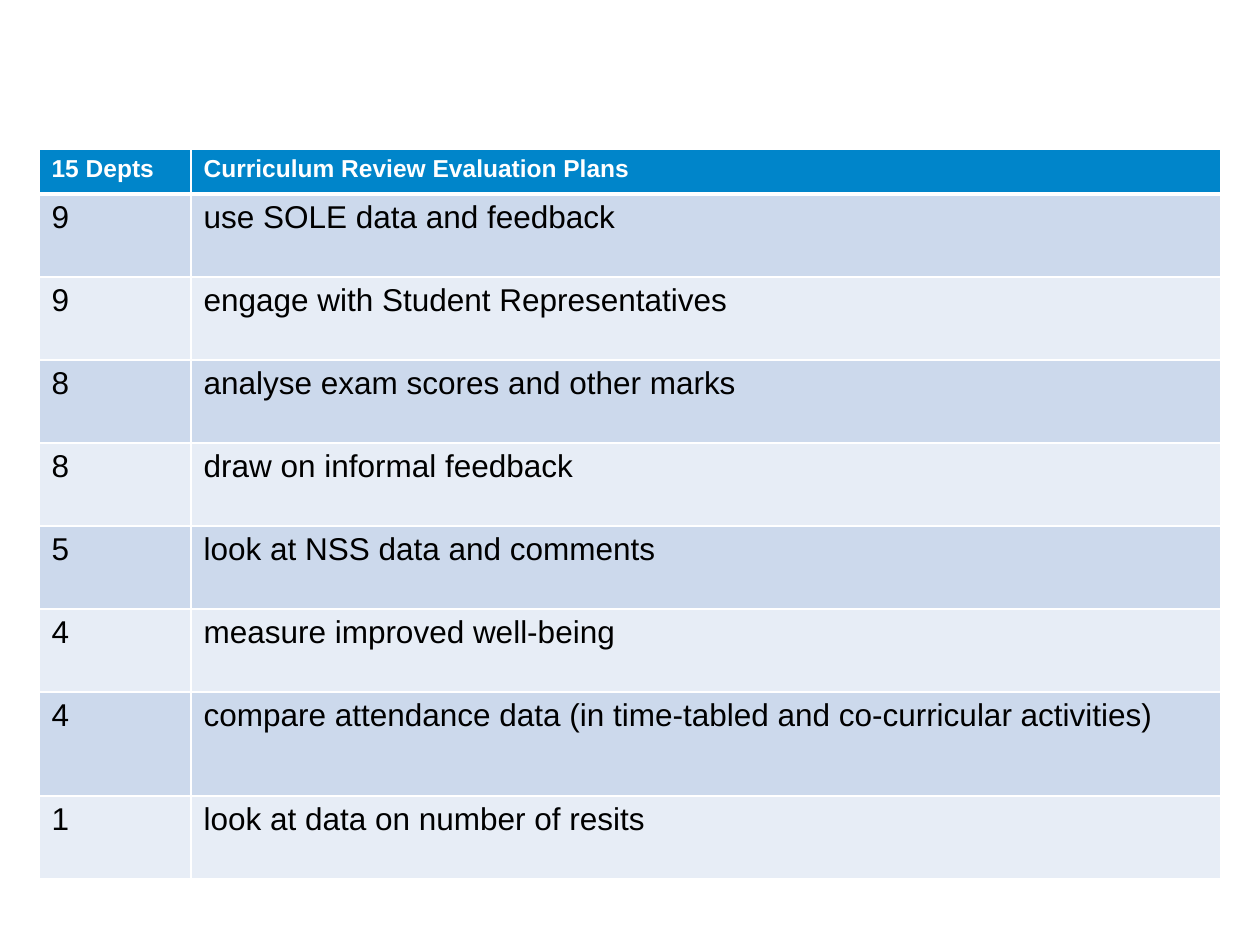
from dataclasses import dataclass

import pptx
import pptx.dml.color
import pptx.oxml
import pptx.oxml.ns
import pptx.util

EMU_PER_PX = 914400 / 126
SLIDE_WIDTH, SLIDE_HEIGHT = 1260, 945
TABLE_LEFT, TABLE_TOP = 39, 149
COLUMN_WIDTHS = (152, 1030)
HEADER_HEIGHT, ROW_HEIGHT, TALL_ROW_HEIGHT = 45, 83, 104
FONT = "Arial"
COLOURS = {
    "header": "0085CA",
    "dark band": "CCD9EC",
    "light band": "E7EDF6",
    "white": "FFFFFF",
    "black": "000000",
}


@dataclass(frozen=True)
class Plan:
    departments: str
    description: str
    height: int = ROW_HEIGHT


HEADER = Plan("15 Depts", "Curriculum Review Evaluation Plans", HEADER_HEIGHT)
PLANS = (
    Plan("9", "use SOLE data and feedback"),
    Plan("9", "engage with Student Representatives"),
    Plan("8", "analyse exam scores and other marks"),
    Plan("8", "draw on informal feedback"),
    Plan("5", "look at NSS data and comments"),
    Plan("4", "measure improved well-being"),
    Plan(
        "4",
        "compare attendance data (in time-tabled and co-curricular activities)",
        TALL_ROW_HEIGHT,
    ),
    Plan("1", "look at data on number of resits"),
)


def px(length: int) -> pptx.util.Emu:
    return pptx.util.Emu(round(length * EMU_PER_PX))


def rgb(name: str) -> pptx.dml.color.RGBColor:
    return pptx.dml.color.RGBColor.from_string(COLOURS[name])


def write_text(text_frame, text: str, *, size: int, colour: str, bold: bool = False) -> None:
    run = text_frame.paragraphs[0].add_run()
    run.text = text
    run.font.name = FONT
    run.font.size = pptx.util.Pt(size)
    run.font.bold = bold
    run.font.color.rgb = rgb(colour)


def set_borders(cell, *, top: int = 1, bottom: int = 1) -> None:
    properties = cell._tc.get_or_add_tcPr()
    namespace = pptx.oxml.ns.nsdecls("a")
    for side, points in (("L", 1), ("R", 1), ("T", top), ("B", bottom)):
        properties.append(pptx.oxml.parse_xml(
            f'<a:ln{side} {namespace} w="{pptx.util.Pt(points)}"><a:solidFill>'
            f'<a:srgbClr val="{COLOURS["white"]}"/></a:solidFill></a:ln{side}>'
        ))


def draw_row(table, index: int, plan: Plan) -> None:
    is_header = index == 0
    band = "header" if is_header else "dark band" if index % 2 else "light band"
    table.rows[index].height = px(plan.height)
    for column, text in enumerate((plan.departments, plan.description)):
        cell = table.cell(index, column)
        set_borders(cell, top=3 if index == 1 else 1, bottom=3 if is_header else 1)
        cell.fill.solid()
        cell.fill.fore_color.rgb = rgb(band)
        write_text(
            cell.text_frame,
            text,
            size=14 if is_header else 18,
            colour="white" if is_header else "black",
            bold=is_header,
        )


def draw_table(slide, plans: tuple[Plan, ...]) -> None:
    table = slide.shapes.add_table(
        len(plans), len(COLUMN_WIDTHS), px(TABLE_LEFT), px(TABLE_TOP),
        px(sum(COLUMN_WIDTHS)), px(sum(plan.height for plan in plans)),
    ).table
    for column, width in zip(table.columns, COLUMN_WIDTHS):
        column.width = px(width)
    for index, plan in enumerate(plans):
        draw_row(table, index, plan)


def main() -> None:
    presentation = pptx.Presentation()
    presentation.slide_width = px(SLIDE_WIDTH)
    presentation.slide_height = px(SLIDE_HEIGHT)
    slide = presentation.slides.add_slide(presentation.slide_layouts[6])
    draw_table(slide, (HEADER, *PLANS))
    presentation.save("out.pptx")


if __name__ == "__main__":
    main()
